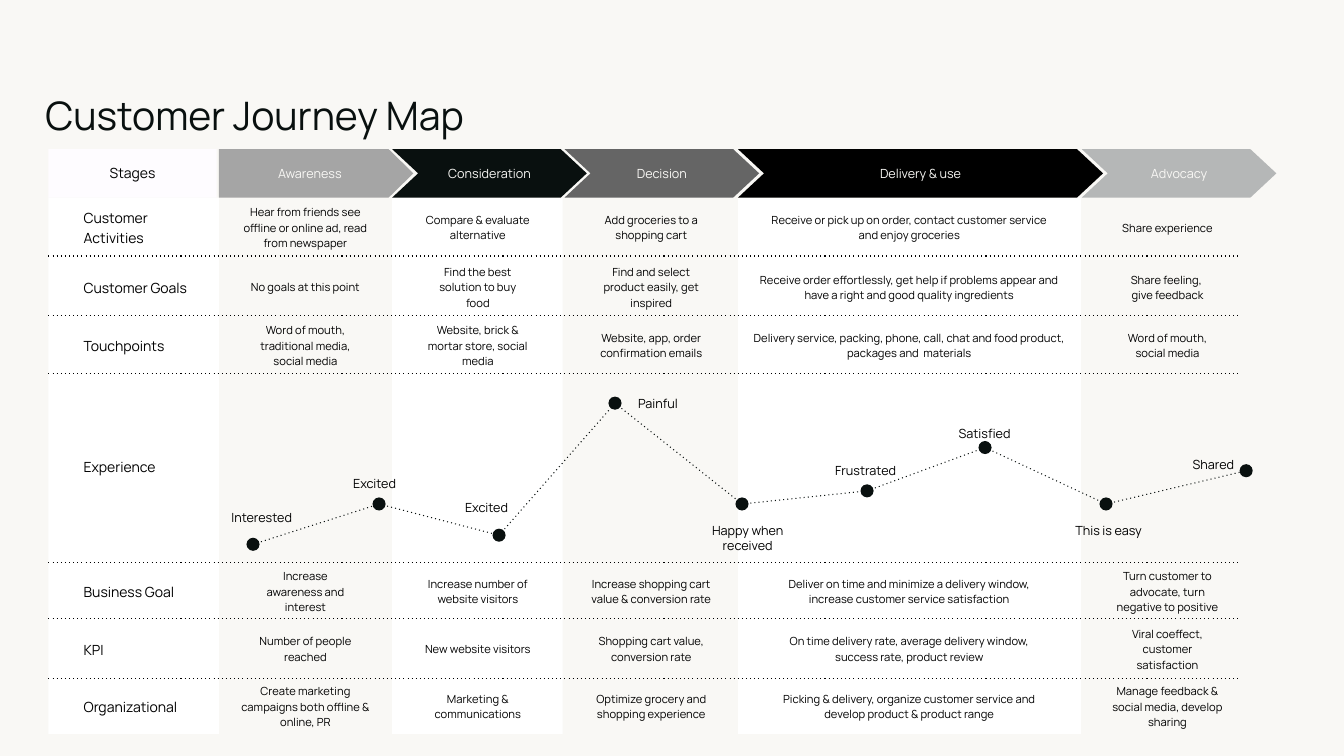
from dataclasses import dataclass
from itertools import pairwise
from typing import Any, NamedTuple

from pptx import Presentation, util as u
from pptx.dml.color import RGBColor
from pptx.enum import dml, shapes, text
from pptx.oxml.ns import qn
from pptx.oxml.xmlchemy import OxmlElement

SHAPE = shapes.MSO_SHAPE
LEFT, CENTER = text.PP_ALIGN.LEFT, text.PP_ALIGN.CENTER
TOP, MIDDLE = text.MSO_ANCHOR.TOP, text.MSO_ANCHOR.MIDDLE


@dataclass(frozen=True)
class Theme:
    font: str = "Manrope"
    paper: str = "F9F8F5"
    ink: str = "09100F"
    black: str = "000000"
    band: str = "FFFFFF"
    title: float = 28
    label: float = 10
    stage: float = 9
    cell: float = 8
    rule: float = 0.75


T = Theme()


class Band(NamedTuple):
    left: float
    width: float


class Stage(NamedTuple):
    name: str
    left: float
    width: float
    fill: str
    kind: Any = SHAPE.CHEVRON
    adj: float | None = 0.537
    color: str = T.paper
    size: float = T.stage


class Cell(NamedTuple):
    width: float
    text: str


class Row(NamedTuple):
    label: str
    middle: float
    rule: float | None
    cells: tuple[Cell, ...] = ()


class Mood(NamedTuple):
    x: float
    y: float
    name: str
    left: float
    top: float
    height: float = 0.19
    spacing: float = 1.56


BODY_TOP, BODY_HEIGHT = 1.96, 5.32
STAGE_TOP, STAGE_HEIGHT = 1.48, 0.48
RULE_LEFT, RULE_RIGHT = 0.48, 12.31
LABEL_LEFT, LABEL_WIDTH = 0.83, 1.19
CELL_HEIGHT, MOOD_WIDTH, DOT = 0.41, 0.85, 0.13
COLUMN_MIDDLES = (3.03, 4.74, 6.46, 9.02, 11.58)

BANDS = (Band(0.48, 1.69), Band(3.89, 1.69), Band(7.32, 3.4))
STAGES = (
    Stage("Stages", 0.48, 1.67, "FEFCFF", SHAPE.RECTANGLE, None, T.black, T.label),
    Stage("Awareness", 2.17, 1.93, "A5A5A5", SHAPE.PENTAGON, 0.51),
    Stage("Consideration", 3.89, 1.93, T.ink),
    Stage("Decision", 5.6, 1.93, "656565"),
    Stage("Delivery & use", 7.32, 3.62, T.black),
    Stage("Advocacy", 10.73, 1.93, "B5B7B7"),
)
ROWS = (
    Row("Customer Activities", 2.25, 2.54, (
        Cell(1.31, "Hear from friends see offline or online ad, read from newspaper"),
        Cell(1.19, "Compare & evaluate alternative"),
        Cell(0.97, "Add groceries to a shopping cart"),
        Cell(2.75, "Receive or pick up on order, contact customer service and enjoy groceries"),
        Cell(1.3, "Share experience"))),
    Row("Customer Goals", 2.84, 3.13, (
        Cell(1.19, "No goals at this point"),
        Cell(0.83, "Find the best solution to buy food"),
        Cell(1.19, "Find and select product easily, get inspired"),
        Cell(3.1, "Receive order effortlessly, get help if problems appear and have a right and good quality ingredients"),
        Cell(1.3, "Share feeling, \ngive feedback"))),
    Row("Touchpoints", 3.42, 3.71, (
        Cell(1.19, "Word of mouth, traditional media, social media"),
        Cell(1.03, "Website, brick & mortar store, social media"),
        Cell(1.19, "Website, app, order confirmation emails"),
        Cell(3.27, "Delivery service, packing, phone, call, chat and food product, packages and  materials"),
        Cell(0.86, "Word of mouth, social media"))),
    Row("Experience", 4.62, 5.58),
    Row("Business Goal", 5.86, 6.14, (
        Cell(0.85, "Increase awareness and interest"),
        Cell(1.02, "Increase number of website visitors"),
        Cell(1.19, "Increase shopping cart value & conversion rate"),
        Cell(2.86, "Deliver on time and minimize a delivery window, increase customer service satisfaction"),
        Cell(1.16, "Turn customer to advocate, turn negative to positive"))),
    Row("KPI", 6.43, 6.73, (
        Cell(1.19, "Number of people reached"),
        Cell(1.19, "New website visitors"),
        Cell(1.19, "Shopping cart value, conversion rate"),
        Cell(2.75, "On time delivery rate, average delivery window, success rate, product review"),
        Cell(0.89, "Viral coeffect, customer satisfaction"))),
    Row("Organizational", 7.0, None, (
        Cell(1.31, "Create marketing campaigns both offline & online, PR"),
        Cell(1.19, "Marketing & communications"),
        Cell(1.19, "Optimize grocery and shopping experience"),
        Cell(2.86, "Picking & delivery, organize customer service and develop product & product range"),
        Cell(1.3, "Manage feedback & social media, develop sharing"))),
)
MOODS = (
    Mood(2.51, 5.4, "Interested", 2.17, 5.0),
    Mood(3.76, 5.0, "Excited", 3.29, 4.66),
    Mood(4.95, 5.31, "Excited", 4.4, 4.9),
    Mood(6.1, 4.0, "Painful", 6.1, 3.87),
    Mood(7.36, 5.0, "Happy when received", 6.99, 5.19, 0.3, 1.0),
    Mood(8.6, 4.87, "Frustrated", 8.16, 4.53),
    Mood(9.77, 4.44, "Satisfied", 9.34, 4.16),
    Mood(10.97, 5.0, "This is easy", 10.57, 5.13),
    Mood(12.36, 4.67, "Shared", 11.61, 4.47),
)


def apply(target: Any, values: dict[str, Any]) -> None:
    for name, value in values.items():
        setattr(target, name, value)


def box(*lengths: float) -> list[int]:
    return [u.Inches(n) for n in lengths]


def write(sp: Any, words: str, size: float, color: str = T.black, align: Any = CENTER,
          anchor: Any = MIDDLE, spacing: float = 1.0, after: float = 0,
          inset: tuple[float, float] = (0, 0)) -> None:
    tf = sp.text_frame
    side, edge = box(*inset)
    apply(tf, dict(text=words, word_wrap=True, auto_size=text.MSO_AUTO_SIZE.NONE,
                   vertical_anchor=anchor, margin_left=side, margin_right=side,
                   margin_top=edge, margin_bottom=edge))
    for p in tf.paragraphs:
        apply(p, dict(alignment=align, line_spacing=spacing, space_after=u.Pt(after)))
        for r in p.runs:
            apply(r.font, dict(name=T.font, size=u.Pt(size)))
            r.font.color.rgb = RGBColor.from_string(color)


def add_filled(s: Any, kind: Any, fill: str, *lengths: float) -> Any:
    sp = s.shapes.add_shape(kind, *box(*lengths))
    sp.shadow.inherit = False
    sp.fill.solid()
    sp.fill.fore_color.rgb = RGBColor.from_string(fill)
    sp.line.fill.background()
    return sp


def add_text(s: Any, words: str, size: float, *lengths: float, **style: Any) -> None:
    write(s.shapes.add_textbox(*box(*lengths)), words, size, **style)


def add_dotted(s: Any, color: str, *ends: float) -> None:
    cx = s.shapes.add_connector(shapes.MSO_CONNECTOR.STRAIGHT, *box(*ends))
    cx.line.color.rgb = RGBColor.from_string(color)
    apply(cx.line, dict(width=u.Pt(T.rule), dash_style=dml.MSO_LINE.ROUND_DOT))
    cx.element.find(".//" + qn("a:prstDash")).set("val", "dot")
    cx.element.spPr.append(OxmlElement("a:effectLst"))


def add_row(s: Any, row: Row) -> None:
    top = row.middle - CELL_HEIGHT / 2
    add_text(s, row.label, T.label, LABEL_LEFT, top, LABEL_WIDTH, CELL_HEIGHT,
             align=LEFT, spacing=1.15)
    for middle, cell in zip(COLUMN_MIDDLES, row.cells):
        add_text(s, cell.text, T.cell, middle - cell.width / 2, top, cell.width,
                 CELL_HEIGHT, spacing=1.15)
    if row.rule:
        add_dotted(s, T.black, RULE_LEFT, row.rule, RULE_RIGHT, row.rule)


def main() -> None:
    prs = Presentation()
    apply(prs, dict(slide_width=u.Inches(13.33), slide_height=u.Inches(7.5)))
    s = prs.slides.add_slide(prs.slide_layouts[5])
    s.background.fill.solid()
    s.background.fill.fore_color.rgb = RGBColor.from_string(T.paper)
    title = s.shapes.title
    apply(title, dict(zip(("left", "top", "width", "height"), box(0.45, 0.91, 9.23, 0.51))))
    write(title, "Customer Journey Map", T.title, T.ink, LEFT, TOP, after=10)

    for band in BANDS:
        add_filled(s, SHAPE.RECTANGLE, T.band, band.left, BODY_TOP, band.width, BODY_HEIGHT)
    for stage in STAGES:
        sp = add_filled(s, stage.kind, stage.fill, stage.left, STAGE_TOP, stage.width, STAGE_HEIGHT)
        if stage.adj:
            sp.adjustments[0] = stage.adj
        write(sp, stage.name, stage.size, stage.color, inset=(0.1, 0.05))
    for row in ROWS:
        add_row(s, row)
    for a, b in pairwise(MOODS):
        add_dotted(s, T.ink, a.x, a.y, b.x, b.y)
    for m in MOODS:
        add_filled(s, SHAPE.OVAL, T.ink, m.x - DOT / 2, m.y - DOT / 2, DOT, DOT)
        add_text(s, m.name, T.stage, m.left, m.top, MOOD_WIDTH, m.height, spacing=m.spacing)
    prs.save("out.pptx")


if __name__ == "__main__":
    main()
